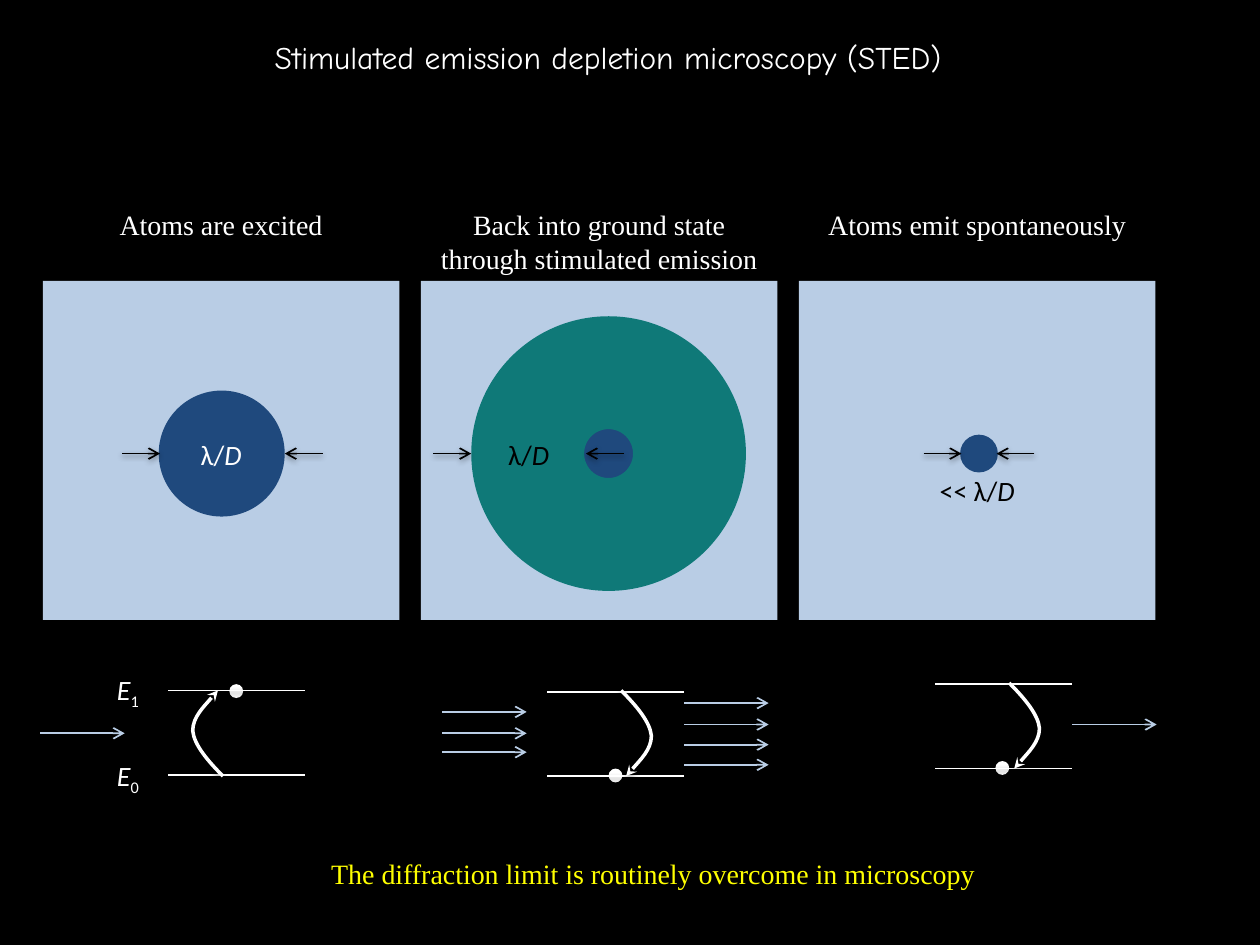
from lxml.etree import SubElement
from pptx import Presentation
from pptx.dml.color import RGBColor
from pptx.enum.shapes import MSO_CONNECTOR, MSO_SHAPE
from pptx.enum.text import MSO_ANCHOR, PP_ALIGN
from pptx.oxml import parse_xml
from pptx.oxml.ns import nsdecls, qn
from pptx.util import Inches, Pt

THEME = {
    "black": RGBColor(0x00, 0x00, 0x00),
    "white": RGBColor(0xFF, 0xFF, 0xFF),
    "yellow": RGBColor(0xFF, 0xFF, 0x00),
    "pale": RGBColor(0xB9, 0xCD, 0xE5),
    "navy": RGBColor(0x1F, 0x49, 0x7D),
    "teal": RGBColor(0x0F, 0x79, 0x78),
    "title_size": Pt(18),
    "body_size": Pt(16),
    "title_font": "Comic Neue",
    "body_font": "Times New Roman",
    "label_font": "Calibri",
}
SHADOW = (
    f'<a:effectLst {nsdecls("a")}><a:outerShdw blurRad="40000" dist="20000" dir="5400000" '
    'rotWithShape="0"><a:srgbClr val="000000"><a:alpha val="38000"/></a:srgbClr>'
    "</a:outerShdw></a:effectLst>"
)

deck = Presentation()
deck.slide_width, deck.slide_height = Inches(10), Inches(7.5)
page = deck.slides.add_slide(deck.slide_layouts[5])
page.background.fill.solid()
page.background.fill.fore_color.rgb = THEME["black"]
shapes = page.shapes


def write(box, spans, font, color, size="body_size", align=PP_ALIGN.LEFT):
    frame = box.text_frame
    frame.word_wrap = True
    frame.vertical_anchor = MSO_ANCHOR.TOP
    para = frame.paragraphs[0]
    para.alignment = align
    for text, formats in spans:
        span = para.add_run()
        span.text = text
        span.font.color.rgb = THEME[color]
        values = {"name": THEME[font], "size": THEME[size], **formats}
        for name, value in values.items():
            setattr(span.font, name, value)
    return para


def style_line(line_shape, color, width, head=None):
    line_shape.line.color.rgb = THEME[color]
    line_shape.line.width = Pt(width)
    properties = line_shape._element.spPr
    if head:
        SubElement(properties.find(qn("a:ln")), qn("a:tailEnd"), type=head)
    for effects in properties.findall(qn("a:effectLst")):
        properties.remove(effects)
    properties.append(parse_xml(SHADOW))


title = shapes.title
title.left, title.top, title.width, title.height = map(Inches, (2.08, 0.25, 6.04, 0.4))
write(title, [("Stimulated emission depletion microscopy (STED)", {})],
      "title_font", "white", "title_size")

panel_left, panel_step, panel_width = 0.34, 3, 2.83
captions = [
    "Atoms are excited",
    "Back into ground state through stimulated emission",
    "Atoms emit spontaneously",
]
solids = []
for column, caption in enumerate(captions):
    left = panel_left + column * panel_step
    solids.append((MSO_SHAPE.RECTANGLE, left, 2.23, panel_width, 2.69, "pale"))
    box = shapes.add_textbox(Inches(left), Inches(1.6), Inches(panel_width), Inches(0.37))
    write(box, [(caption, {})], "body_font", "white", align=PP_ALIGN.CENTER)

solids += [
    (MSO_SHAPE.OVAL, 1.26, 3.1, 1, 1, "navy"),
    (MSO_SHAPE.OVAL, 4.26, 3.1, 1, 1, "navy"),
    (MSO_SHAPE.DONUT, 3.74, 2.51, 2.18, 2.18, "teal"),
    (MSO_SHAPE.OVAL, 7.62, 3.45, 0.3, 0.3, "navy"),
]

level_width, level_gap, dot_size = 1.09, 0.67, 0.11
transitions = [
    (1.33, 5.48, 1.77, 6.16, -1, 1.82, 5.43),
    (4.34, 5.49, 4.93, 5.48, 1, 4.83, 6.1),
    (7.42, 5.43, 8.01, 5.42, 1, 7.9, 6.04),
]
lines = []
for left, top, *_ in transitions:
    for y in (top, top + level_gap):
        lines.append((left + level_width, y, left, y, "white", None))

photon_length = 0.67
photons = [(0.32, [5.82]), (3.51, [5.65, 5.82, 5.97]),
           (5.43, [5.58, 5.75, 5.91, 6.07]), (8.51, [5.75])]
for left, heights in photons:
    for y in heights:
        lines.append((left, y, left + photon_length, y, "pale", "arrow"))

spot_y, marker_length = 3.6, 0.3
for left_edge, right_edge in [(1.27, 2.26), (3.74, 4.65), (7.63, 7.91)]:
    for edge, tail in [(left_edge, left_edge - marker_length),
                       (right_edge, right_edge + marker_length)]:
        lines.append((tail, spot_y, edge, spot_y, "black", "arrow"))

for *_, dot_left, dot_top in transitions:
    solids.append((MSO_SHAPE.OVAL, dot_left, dot_top, dot_size, dot_size, "white"))

for kind, left, top, width, height, color in solids:
    solid = shapes.add_shape(kind, *map(Inches, (left, top, width, height)))
    solid.shadow.inherit = False
    solid.fill.solid()
    solid.fill.fore_color.rgb = THEME[color]
    solid.line.fill.background()
    if kind == MSO_SHAPE.DONUT:
        solid.adjustments[0] = 0.411

for x1, y1, x2, y2, color, head in lines:
    line = shapes.add_connector(MSO_CONNECTOR.STRAIGHT, *map(Inches, (x1, y1, x2, y2)))
    style_line(line, color, 1, head)

curve = [(0.12, 0.12), (0.23, 0.25), (0.24, 0.36), (0.24, 0.47), (0.04, 0.68), (0.04, 0.68)]
for _, _, x, y, direction, *_ in transitions:
    builder = shapes.build_freeform(Inches(x), Inches(y))
    builder.add_line_segments(
        [(Inches(x + direction * dx), Inches(y + direction * dy)) for dx, dy in curve],
        close=False,
    )
    jump = builder.convert_to_shape()
    jump.fill.background()
    segments = list(jump._element.iter(qn("a:lnTo")))
    outline = segments[0].getparent()
    for start in range(0, len(segments), 3):
        bezier = SubElement(outline, qn("a:cubicBezTo"))
        for segment in segments[start:start + 3]:
            bezier.append(segment[0])
            outline.remove(segment)
    style_line(jump, "white", 2, "stealth")

italic = {"italic": True}
labels = [
    (1.33, 3.42, [("λ/", {}), ("D", italic)], "white", PP_ALIGN.CENTER),
    (3.77, 3.42, [("λ/", {}), ("D", italic)], "black", PP_ALIGN.CENTER),
    (7.33, 3.71, [("<< λ/", {}), ("D", italic)], "black", PP_ALIGN.CENTER),
    (0.83, 5.29, [("E", italic), ("1", {})], "white", PP_ALIGN.LEFT),
    (0.83, 5.97, [("E", italic), ("0", {})], "white", PP_ALIGN.LEFT),
]
for left, top, spans, color, align in labels:
    box = shapes.add_textbox(*map(Inches, (left, top, 0.85, 0.37)))
    para = write(box, spans, "label_font", color, align=align)
    if spans[0][0] == "E":
        para.runs[1].font._element.set("baseline", "-25000")

box = shapes.add_textbox(*map(Inches, (2.53, 6.75, 5.47, 0.37)))
write(box, [("The diffraction limit is routinely overcome in microscopy", {})],
      "body_font", "yellow")

deck.save("out.pptx")
